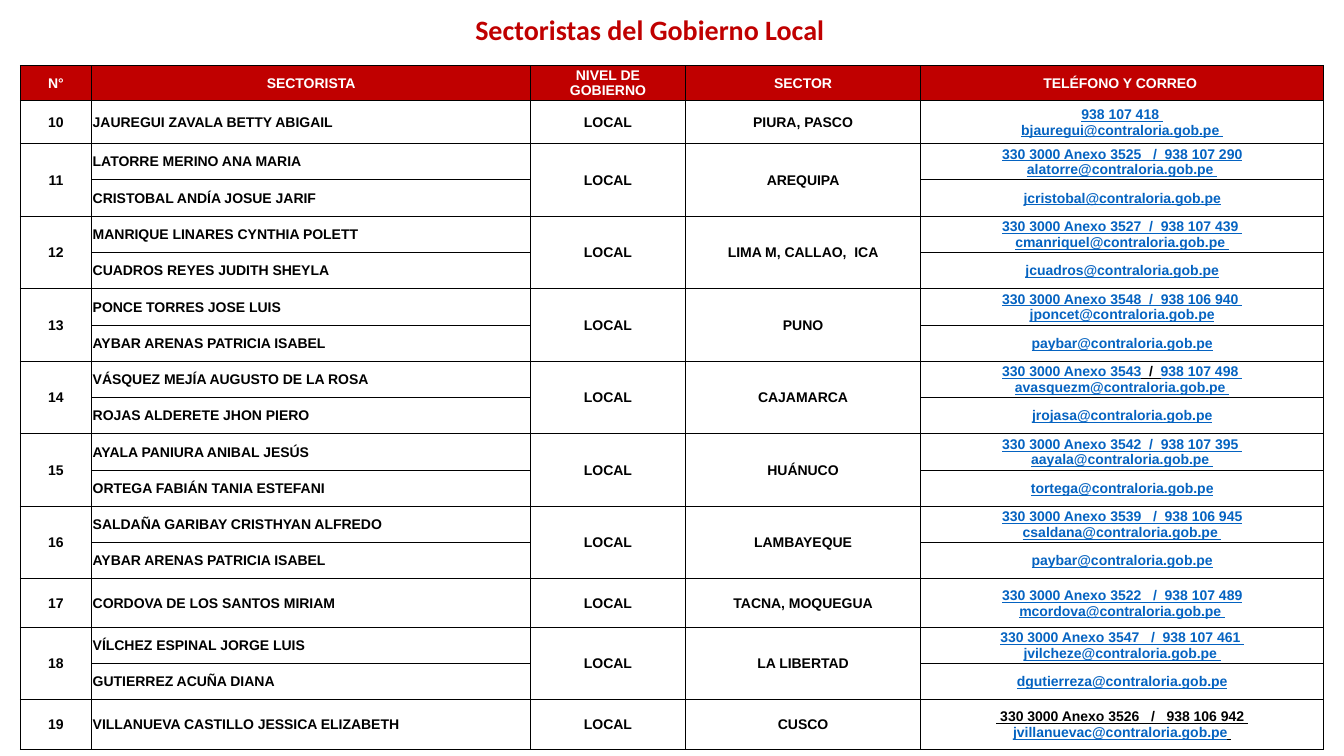
from copy import deepcopy
from dataclasses import dataclass

from lxml.etree import SubElement
from pptx import Presentation
from pptx.dml.color import RGBColor
from pptx.enum.text import MSO_ANCHOR, MSO_AUTO_SIZE, PP_ALIGN
from pptx.oxml.ns import qn
from pptx.util import Pt

PX = 9144  # one px is a hundredth of an inch


@dataclass(frozen=True)
class Theme:
    red: str = "C00000"
    white: str = "FFFFFF"
    black: str = "000000"
    link: str = "0563C1"
    title_font: str = "Calibri"
    table_font: str = "Arial"
    title_size: int = 20
    table_size: int = 10
    border_width: int = Pt(0.5)


THEME = Theme()

TITLE = "Sectoristas del Gobierno Local"
HEADINGS = ["N°", "SECTORISTA", "NIVEL DE\nGOBIERNO", "SECTOR", "TELÉFONO Y CORREO "]
LEVEL = "LOCAL"
FIRST_NUMBER = 10
COLUMN_WIDTHS = [71, 435, 154, 233, 400]
HEADER_HEIGHT = 33
SHARED_HEIGHT = 36

# Each sector: name, height of its rows, people with their contact.
# A contact is link text, or a list of (text, colour) pieces.
SECTORS = [
    ("PIURA, PASCO", 43, [
        ("JAUREGUI ZAVALA BETTY ABIGAIL", "938 107 418 \nbjauregui@contraloria.gob.pe "),
    ]),
    ("AREQUIPA", SHARED_HEIGHT, [
        ("LATORRE MERINO ANA MARIA",
         "330 3000 Anexo 3525   /  938 107 290\nalatorre@contraloria.gob.pe "),
        ("CRISTOBAL ANDÍA JOSUE JARIF", "jcristobal@contraloria.gob.pe"),
    ]),
    ("LIMA M, CALLAO,  ICA", SHARED_HEIGHT, [
        ("MANRIQUE LINARES CYNTHIA POLETT",
         "330 3000 Anexo 3527  /  938 107 439 \ncmanriquel@contraloria.gob.pe "),
        ("CUADROS REYES JUDITH SHEYLA", "jcuadros@contraloria.gob.pe"),
    ]),
    ("PUNO", SHARED_HEIGHT, [
        ("PONCE TORRES JOSE LUIS",
         "330 3000 Anexo 3548  /  938 106 940 \njponcet@contraloria.gob.pe"),
        ("AYBAR ARENAS PATRICIA ISABEL", "paybar@contraloria.gob.pe"),
    ]),
    ("CAJAMARCA", SHARED_HEIGHT, [
        ("VÁSQUEZ MEJÍA AUGUSTO DE LA ROSA",
         [("330 3000 Anexo 3543", THEME.link), ("  /  ", THEME.black),
          ("938 107 498 \navasquezm@contraloria.gob.pe ", THEME.link)]),
        ("ROJAS ALDERETE JHON PIERO", "jrojasa@contraloria.gob.pe"),
    ]),
    ("HUÁNUCO", SHARED_HEIGHT, [
        ("AYALA PANIURA ANIBAL JESÚS",
         "330 3000 Anexo 3542  /  938 107 395 \naayala@contraloria.gob.pe "),
        ("ORTEGA FABIÁN TANIA ESTEFANI", "tortega@contraloria.gob.pe"),
    ]),
    ("LAMBAYEQUE", SHARED_HEIGHT, [
        ("SALDAÑA GARIBAY CRISTHYAN ALFREDO",
         "330 3000 Anexo 3539   /  938 106 945\ncsaldana@contraloria.gob.pe "),
        ("AYBAR ARENAS PATRICIA ISABEL", "paybar@contraloria.gob.pe"),
    ]),
    ("TACNA, MOQUEGUA", 48, [
        ("CORDOVA DE LOS SANTOS MIRIAM",
         "330 3000 Anexo 3522   /  938 107 489\nmcordova@contraloria.gob.pe "),
    ]),
    ("LA LIBERTAD", SHARED_HEIGHT, [
        ("VÍLCHEZ ESPINAL JORGE LUIS",
         "330 3000 Anexo 3547   /  938 107 461 \njvilcheze@contraloria.gob.pe "),
        ("GUTIERREZ ACUÑA DIANA", "dgutierreza@contraloria.gob.pe"),
    ]),
    ("CUSCO", 49, [
        ("VILLANUEVA CASTILLO JESSICA ELIZABETH",
         [(" 330 3000 Anexo 3526   /   938 106 942 \n", THEME.black),
          ("jvillanuevac@contraloria.gob.pe", THEME.link), (" ", THEME.black)]),
    ]),
]


def format_run(run, font_name, size, color, underline=False):
    run.font.name = font_name
    run.font.size = Pt(size)
    run.font.bold = True
    run.font.underline = underline or None
    run.font.color.rgb = RGBColor.from_string(color)


def write_cell(cell, pieces, align=PP_ALIGN.CENTER, underline=False):
    """Write (text, colour) pieces into one paragraph; a newline is a line break."""
    paragraph = cell.text_frame.paragraphs[0]
    paragraph.alignment = align
    for text, color in pieces:
        for index, line in enumerate(text.split("\n")):
            if index:
                paragraph.add_line_break()
            if line:
                run = paragraph.add_run()
                run.text = line
                format_run(run, THEME.table_font, THEME.table_size, color, underline)
    # Line breaks take the type size of the text around them
    for line_break in paragraph._p.findall(qn("a:br")):
        line_break.append(deepcopy(paragraph.runs[0]._r.rPr))


def style_cell(cell, is_header):
    cell.vertical_anchor = MSO_ANCHOR.MIDDLE
    cell.margin_left = cell.margin_right = cell.margin_top = PX
    cell.margin_bottom = 0
    properties = cell._tc.get_or_add_tcPr()
    for side in ("lnL", "lnR", "lnT", "lnB"):
        border = SubElement(properties, qn(f"a:{side}"), w=str(THEME.border_width))
        fill = SubElement(border, qn("a:solidFill"))
        SubElement(fill, qn("a:srgbClr"), val=THEME.black)
    if is_header:
        cell.fill.solid()
        cell.fill.fore_color.rgb = RGBColor.from_string(THEME.red)
    else:
        cell.fill.background()


def add_title(slide, left, top, width, height):
    box = slide.shapes.add_textbox(left * PX, top * PX, width * PX, height * PX)
    text_frame = box.text_frame
    text_frame.word_wrap = True
    text_frame.auto_size = MSO_AUTO_SIZE.SHAPE_TO_FIT_TEXT
    text_frame.text = TITLE
    paragraph = text_frame.paragraphs[0]
    paragraph.alignment = PP_ALIGN.CENTER
    format_run(paragraph.runs[0], THEME.title_font, THEME.title_size, THEME.red)


def add_directory(slide, left, top):
    heights = [HEADER_HEIGHT]
    for _, height, people in SECTORS:
        heights += [height] * len(people)
    frame = slide.shapes.add_table(
        len(heights), len(COLUMN_WIDTHS), left * PX, top * PX,
        sum(COLUMN_WIDTHS) * PX, sum(heights) * PX)
    table = frame.table
    table.first_row = table.horz_banding = False

    # Grid
    for column, width in zip(table.columns, COLUMN_WIDTHS):
        column.width = width * PX
    for index, (row, height) in enumerate(zip(table.rows, heights)):
        row.height = height * PX
        for cell in row.cells:
            style_cell(cell, is_header=index == 0)

    # Header
    for column, heading in enumerate(HEADINGS):
        write_cell(table.cell(0, column), [(heading, THEME.white)])

    # Sectors, with number, level and sector shared by their people
    first = 1
    for number, (sector, _, people) in enumerate(SECTORS, FIRST_NUMBER):
        last = first + len(people) - 1
        for column, text in ((0, str(number)), (2, LEVEL), (3, sector)):
            if last > first:
                table.cell(first, column).merge(table.cell(last, column))
            write_cell(table.cell(first, column), [(text, THEME.black)])
        for row, (name, contact) in enumerate(people, first):
            pieces = [(contact, THEME.link)] if isinstance(contact, str) else contact
            write_cell(table.cell(row, 1), [(name, THEME.black)], PP_ALIGN.LEFT)
            write_cell(table.cell(row, 4), pieces, underline=True)
        first = last + 1


def main():
    presentation = Presentation()
    presentation.slide_width = 1333 * PX
    presentation.slide_height = 750 * PX
    slide = presentation.slides.add_slide(presentation.slide_layouts[6])
    add_title(slide, 223, 7, 843, 44)
    add_directory(slide, 20, 65)
    presentation.save("out.pptx")


if __name__ == "__main__":
    main()
